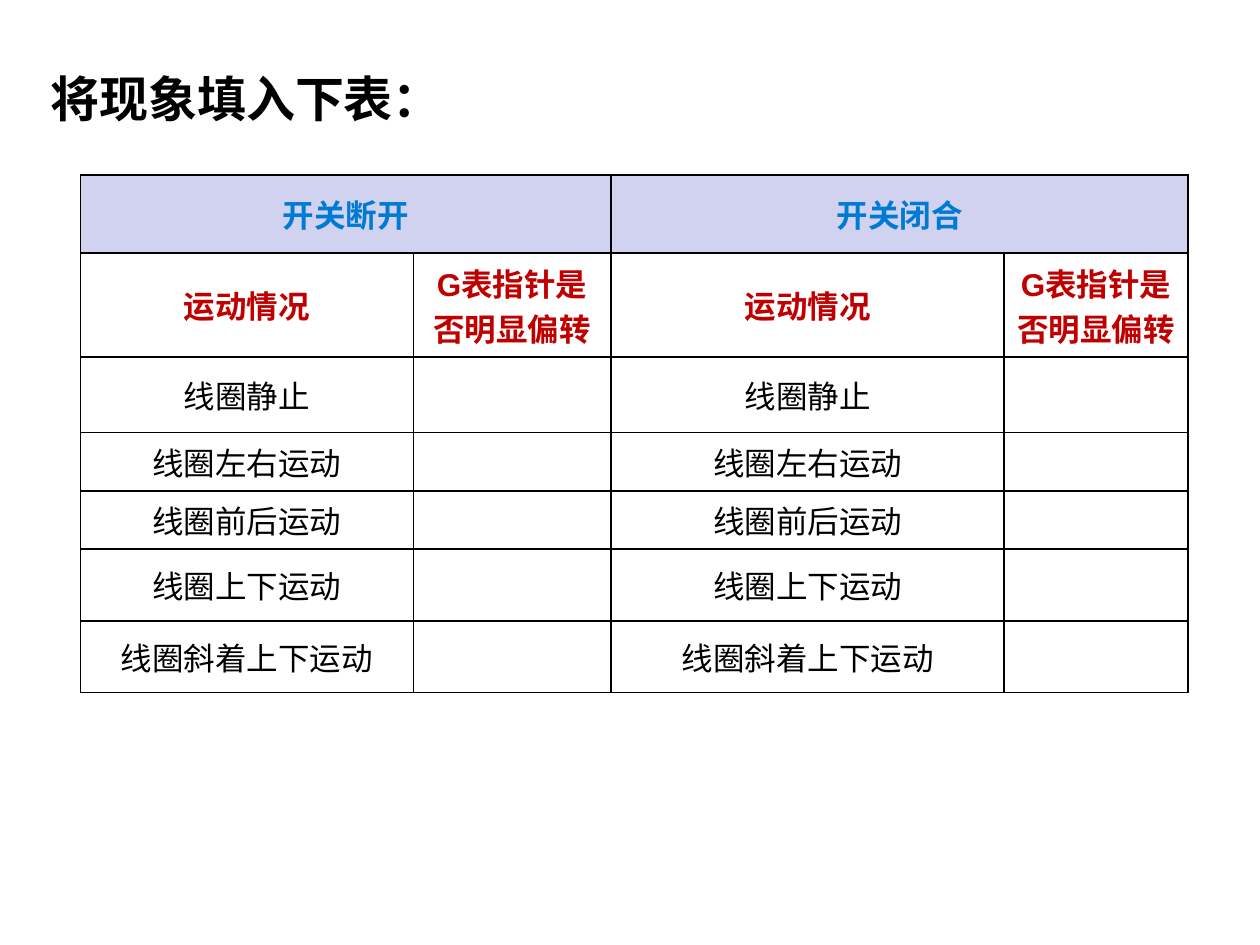
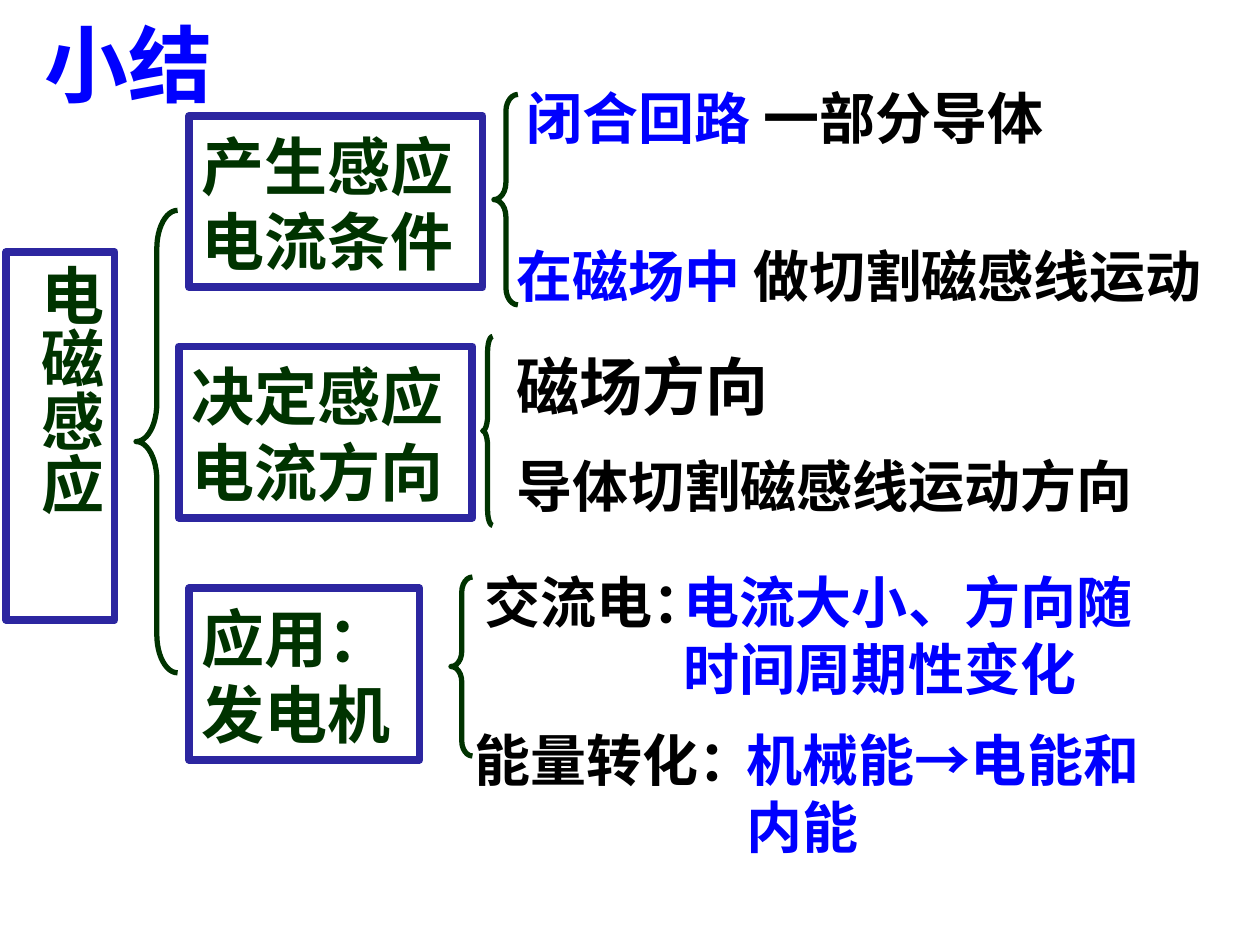
from lxml.etree import SubElement
from pptx import Presentation
from pptx.dml.color import RGBColor
from pptx.enum.shapes import MSO_SHAPE
from pptx.enum.text import MSO_ANCHOR, MSO_AUTO_SIZE, PP_ALIGN
from pptx.oxml import parse_xml
from pptx.oxml.ns import nsdecls, qn
from pptx.util import Pt

EMU_PER_PX = 9144
PX_PER_POINT = 100 / 72
COLORS = {
    "black": "000000",
    "white": "FFFFFF",
    "blue": "0000FF",
    "green": "003300",
    "frame": "2C26A0",
    "header_fill": "D1D1F0",
    "header_text": "007BD3",
    "red": "C00000",
}
LATIN = "Arial"
CHINESE = "Noto Sans CJK SC"
LINE_HEIGHT = 1.2
TEXT_DROP = 0.08
TOP_INSET = 5


def px(length):
    return round(length * EMU_PER_PX)


def rgb(name):
    return RGBColor.from_string(COLORS[name])


class Deck:
    def __init__(self, width, height):
        self.presentation = Presentation()
        self.presentation.slide_width = px(width)
        self.presentation.slide_height = px(height)
        self.slide = None

    def add_slide(self, title, box, size, color, font):
        layout = self.presentation.slide_layouts[5]
        self.slide = self.presentation.slides.add_slide(layout)
        shape = self.slide.shapes.title
        shape.left, shape.top, shape.width, shape.height = map(px, box)
        self.fill_text(shape.text_frame, [(title, color)], size, font)

    def style(self, paragraph, size, font, bold=True, color=None):
        paragraph.font.size = Pt(size)
        paragraph.font.bold = bold
        if color:
            paragraph.font.color.rgb = rgb(color)
        paragraph.font.name = font
        latin = paragraph._p.pPr.find(qn("a:defRPr")).find(qn("a:latin"))
        latin.addnext(parse_xml(f'<a:ea {nsdecls("a")} typeface="{CHINESE}"/>'))

    def fill_text(self, frame, parts, size, font, wrap=True, vertical=False):
        frame.word_wrap = wrap
        frame.auto_size = MSO_AUTO_SIZE.NONE
        frame.vertical_anchor = MSO_ANCHOR.TOP
        if vertical:
            frame._txBody.bodyPr.set("vert", "eaVert")
        else:
            frame.margin_top = px(TOP_INSET + TEXT_DROP * size * PX_PER_POINT)
        paragraph = frame.paragraphs[0]
        paragraph.alignment = PP_ALIGN.LEFT
        paragraph.line_spacing = Pt(size * LINE_HEIGHT)
        shared = parts[0][1] if len(parts) == 1 else None
        self.style(paragraph, size, font, color=shared)
        for text, color in parts:
            run = paragraph.add_run()
            run.text = text
            if not shared:
                run.font.color.rgb = rgb(color)

    def text(self, box, parts, size=32, font=CHINESE, wrap=True):
        shape = self.slide.shapes.add_textbox(*map(px, box))
        self.fill_text(shape.text_frame, parts, size, font, wrap)

    def outline(self, kind, box, color, width):
        shape = self.slide.shapes.add_shape(kind, *map(px, box))
        shape.shadow.inherit = False
        shape.fill.background()
        shape.line.color.rgb = rgb(color)
        shape.line.width = Pt(width)
        return shape

    def topic(self, box, text, vertical=False):
        shape = self.outline(MSO_SHAPE.RECTANGLE, box, "frame", 4.5)
        self.fill_text(shape.text_frame, [(text, "green")], 36, LATIN, vertical=vertical)

    def brace(self, box, curve):
        shape = self.outline(MSO_SHAPE.LEFT_BRACE, box, "green", 3)
        shape.adjustments[0] = curve
        shape.adjustments[1] = 0.5

    def table(self, left, top, widths, heights):
        frame = self.slide.shapes.add_table(
            len(heights), len(widths),
            *map(px, (left, top, sum(widths), sum(heights))),
        )
        table = frame.table
        table.first_row = table.horz_banding = False
        for column, width in zip(table.columns, widths):
            column.width = px(width)
        for row, height in zip(table.rows, heights):
            row.height = px(height)
        for cell in table.iter_cells():
            cell.fill.background()
            self.border(cell)
        return table

    def border(self, cell):
        properties = cell._tc.get_or_add_tcPr()
        for index, side in enumerate(("lnL", "lnR", "lnT", "lnB")):
            line = SubElement(properties, qn(f"a:{side}"), w=str(Pt(1)))
            fill = SubElement(line, qn("a:solidFill"))
            SubElement(fill, qn("a:srgbClr"), val=COLORS["black"])
            properties.insert(index, line)

    def cell(self, cell, text, color, font=CHINESE, bold=True, fill=None):
        cell.text = text
        cell.vertical_anchor = MSO_ANCHOR.MIDDLE
        if fill:
            cell.fill.solid()
            cell.fill.fore_color.rgb = rgb(fill)
        paragraph = cell.text_frame.paragraphs[0]
        paragraph.alignment = PP_ALIGN.CENTER
        self.style(paragraph, 18, font, bold, color)


def observation_slide(deck):
    deck.add_slide("将现象填入下表：", (30, 46, 350, 57), 28, "black", CHINESE)
    table = deck.table(64, 139, (264, 157, 312, 146), (62, 70, 60, 45, 46, 57, 57))
    motions = ("线圈静止", "线圈左右运动", "线圈前后运动", "线圈上下运动", "线圈斜着上下运动")
    for column, switch_state in ((0, "开关断开"), (2, "开关闭合")):
        table.cell(0, column).merge(table.cell(0, column + 1))
        deck.cell(table.cell(0, column), switch_state, "header_text", fill="header_fill")
        for offset, heading in enumerate(("运动情况", "G表指针是否明显偏转")):
            deck.cell(table.cell(1, column + offset), heading, "red", LATIN, fill="white")
        for row, motion in enumerate(motions, start=2):
            deck.cell(table.cell(row, column), motion, "black", bold=False)


def summary_slide(deck):
    deck.add_slide("小结", (25, 0, 167, 90), 48, "blue", LATIN)

    deck.topic((5, 200, 86, 292), "电磁感应", vertical=True)
    for box, topic in (
        ((150, 92, 233, 136), "产生感应电流条件"),
        ((142, 275, 233, 136), "决定感应电流方向"),
        ((150, 467, 183, 136), "应用：发电机"),
    ):
        deck.topic(box, topic)

    for box, curve in (
        ((108, 167, 33, 367), 0.92),
        ((392, 75, 19, 167), 0.71),
        ((383, 267, 8, 150), 1.5),
        ((358, 458, 17, 142), 0.71),
    ):
        deck.brace(box, curve)

    deck.text((408, 58, 467, 64), [("闭合回路", "blue"), (" 一部分导体", "black")])
    deck.text((400, 183, 600, 63), [("在磁场中 ", "blue"), ("做切割磁感线运动", "black")])
    deck.text((400, 267, 292, 70), [("磁场方向", "black")], 36, LATIN)
    deck.text((400, 350, 542, 63), [("导体切割磁感线运动方向", "black")])

    for label_box, label, detail_box, detail in (
        ((375, 442, 175, 63), "交流电：", (533, 442, 408, 117), "电流大小、方向随时间周期性变化"),
        ((367, 567, 233, 63), "能量转化：", (583, 567, 333, 117), "机械能→电能和内能"),
    ):
        deck.text(label_box, [(label, "black")], wrap=False)
        deck.text(detail_box, [(detail, "blue")])


def main():
    deck = Deck(1000, 750)
    observation_slide(deck)
    summary_slide(deck)
    deck.presentation.save("out.pptx")


if __name__ == "__main__":
    main()
